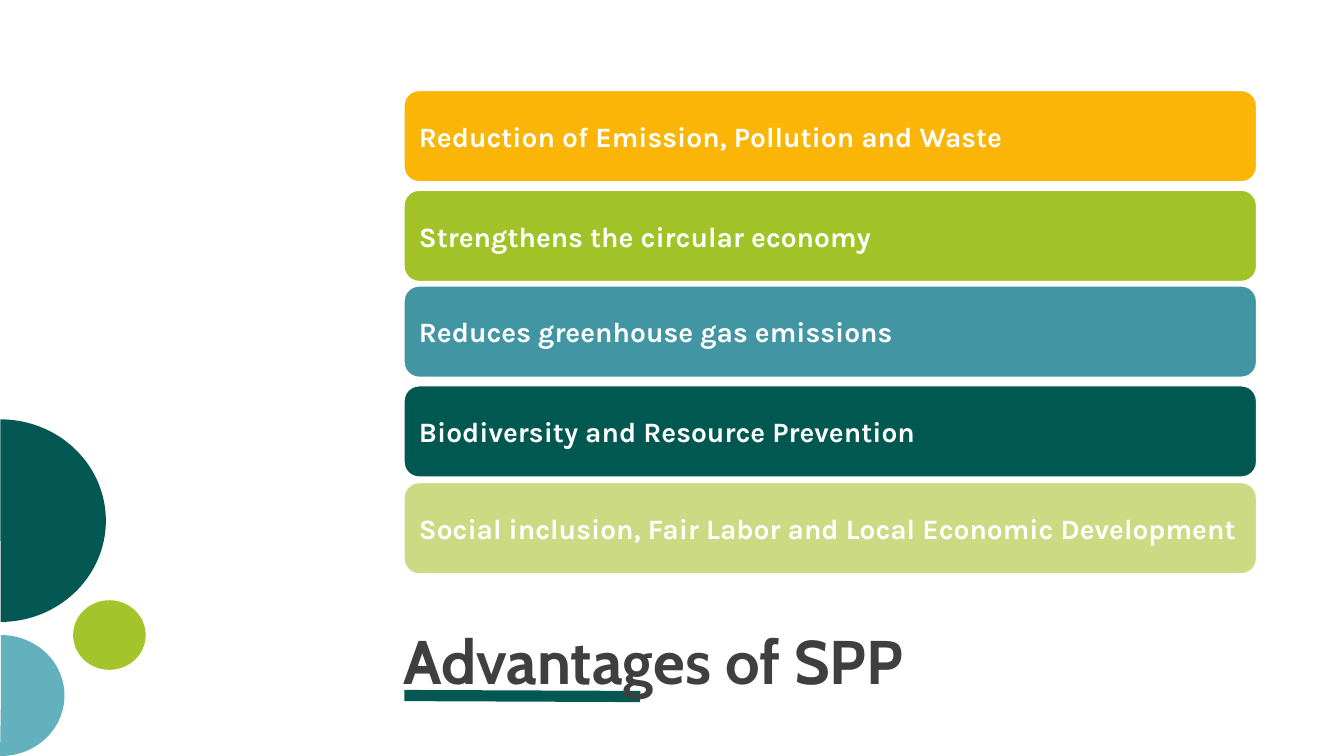
from lxml.etree import SubElement
from pptx import Presentation
from pptx.dml.color import RGBColor
from pptx.enum.shapes import MSO_CONNECTOR, MSO_SHAPE
from pptx.enum.text import MSO_ANCHOR, MSO_AUTO_SIZE, PP_ALIGN
from pptx.oxml.ns import qn
from pptx.util import Pt

PX = 9144
WHITE = RGBColor(0xFF, 0xFF, 0xFF)
GREY = RGBColor(0x3F, 0x3F, 0x3F)
TEAL = RGBColor(0x03, 0x58, 0x54)
SKY = RGBColor(0x64, 0xB1, 0xBE)
LEAF = RGBColor(0xA3, 0xC4, 0x2A)
AMBER = RGBColor(0xFA, 0xB5, 0x06)
LIME = RGBColor(0xA2, 0xC3, 0x28)
BLUE = RGBColor(0x42, 0x95, 0xA2)
PINE = RGBColor(0x00, 0x58, 0x51)
PALE = RGBColor(0xCB, 0xDA, 0x83)

TITLE = {"name": "Cabin", "size": Pt(44), "bold": True}
LABEL = {"name": "Karla", "size": Pt(20), "bold": True}
BARS = [
    (0, AMBER, "Reduction of Emission, Pollution and Waste"),
    (99, LIME, "Strengthens the circular economy"),
    (194, BLUE, "Reduces greenhouse gas emissions"),
    (293, PINE, "Biodiversity and Resource Prevention"),
    (389, PALE, "Social inclusion, Fair Labor and Local Economic Development"),
]
DISCS = [
    (MSO_SHAPE.PIE, (-100, 0, 201, 209), TEAL, (0, 107.96)),
    (MSO_SHAPE.PIE, (-59, 215, 120, 126), SKY, (0, 108.52)),
    (MSO_SHAPE.OVAL, (74, 182, 69, 72), LEAF, ()),
]


def scale(*sizes):
    """Turn px lengths into EMU."""
    return [size * PX for size in sizes]


def apply(item, values):
    """Set each named value on an item."""
    for name, value in values.items():
        setattr(item, name, value)


def write(shape, text, style, color, inset, anchor):
    """Write one left-aligned paragraph into a shape."""
    frame = shape.text_frame
    edges = ("margin_left", "margin_top", "margin_right", "margin_bottom")
    apply(frame, dict.fromkeys(edges, inset * PX))
    apply(frame, {"word_wrap": True, "auto_size": MSO_AUTO_SIZE.NONE,
                  "vertical_anchor": anchor})
    para = frame.paragraphs[0]
    para.alignment = PP_ALIGN.LEFT
    run = para.add_run()
    run.text = text
    apply(run.font, style)
    run.font.color.rgb = color
    return para


def block(slide, kind, box, color, adjust):
    """Add a plain filled shape without line or shadow."""
    shape = slide.shapes.add_shape(kind, *scale(*box))
    shape.shadow.inherit = False
    shape.fill.solid()
    shape.fill.fore_color.rgb = color
    shape.line.fill.background()
    for index, value in enumerate(adjust):
        shape.adjustments[index] = value
    return shape


def discs(slide, left, top):
    """Place the turned circles at the slide edge."""
    for kind, (x, y, wide, high), color, adjust in DISCS:
        box = (left + x, top + y, wide, high)
        block(slide, kind, box, color, adjust).rotation = 270


def head(slide, left, top, width, height):
    """Place the title over its thick underline."""
    base = top + height
    rule = slide.shapes.add_connector(
        MSO_CONNECTOR.STRAIGHT,
        *scale(left + 1, base - 1, left + 235, base))
    rule.line.width = Pt(8)
    rule.line.color.rgb = TEAL
    SubElement(rule.element.spPr, qn("a:effectLst"))

    title = slide.shapes.title
    names = ("left", "top", "width", "height")
    apply(title, dict(zip(names, scale(left, top, width, height))))
    para = write(title, "Advantages of SPP", TITLE, GREY, 0, MSO_ANCHOR.BOTTOM)
    para.line_spacing = 0.8
    title.element.getparent().append(title.element)


def bars(slide, left, top, width, height):
    """Stack the labelled bars."""
    for drop, color, text in BARS:
        box = (left, top + drop, width, height)
        bar = block(slide, MSO_SHAPE.ROUNDED_RECTANGLE, box, color, (0.17,))
        bar.line.width = Pt(2)
        bar.line.color.rgb = WHITE
        write(bar, text, LABEL, WHITE, 11, MSO_ANCHOR.MIDDLE)


def main():
    """Build and save the slide."""
    deck = Presentation()
    deck.slide_width, deck.slide_height = scale(1333, 750)
    slide = deck.slides.add_slide(deck.slide_layouts.get_by_name("Title Only"))
    discs(slide, 0, 412)
    head(slide, 400, 540, 868, 151)
    bars(slide, 400, 89, 847, 92)
    deck.save("out.pptx")


if __name__ == "__main__":
    main()
